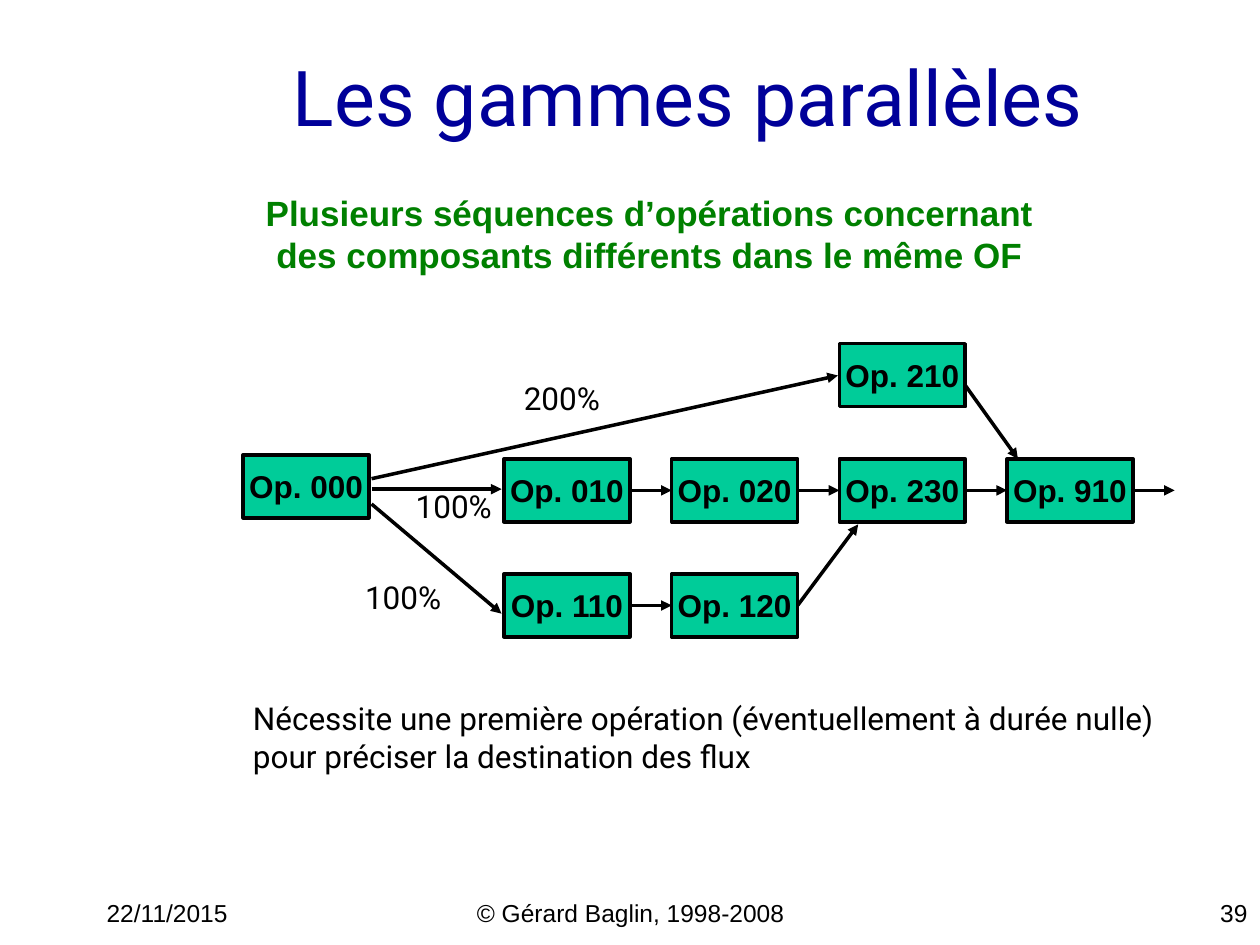
from dataclasses import dataclass

from lxml import etree
from pptx import Presentation
from pptx import util as u
from pptx.dml.color import RGBColor
from pptx.enum import shapes, text
from pptx.oxml import ns

BLACK = RGBColor(0x00, 0x00, 0x00)
NAVY = RGBColor(0x00, 0x00, 0x99)
DARK_GREEN = RGBColor(0x00, 0x80, 0x00)
TEAL = RGBColor(0x00, 0xCC, 0x99)

# Grid of operations, in centimetres
BOX_W, BOX_H = 2.54, 1.27
FIRST_COLUMN, COLUMN_STEP = 10.16, 3.38
FIRST_ROW, ROW_STEP = 6.93, 2.32
LINE_WIDTH = u.Pt(2)
LEFT, CENTER, RIGHT = text.PP_ALIGN.LEFT, text.PP_ALIGN.CENTER, text.PP_ALIGN.RIGHT


@dataclass
class Operation:
    number: str
    left: float
    top: float

    @property
    def right(self) -> float:
        return self.left + BOX_W

    @property
    def middle(self) -> float:
        return self.top + BOX_H / 2


@dataclass
class Flow:
    x1: float
    y1: float
    x2: float
    y2: float


@dataclass
class Label:
    wording: str
    left: float
    top: float
    width: float
    height: float
    size: int = 18
    font: str = "Roboto"
    align: text.PP_ALIGN = LEFT
    color: RGBColor = BLACK
    bold: bool = False
    wrap: bool = False


def grid_operation(number: str, column: int, row: int) -> Operation:
    return Operation(number, FIRST_COLUMN + column * COLUMN_STEP,
                     FIRST_ROW + row * ROW_STEP)


def write(frame, wording: str, *, size: int = 18, font: str = "Arial",
          color: RGBColor = BLACK, bold: bool = False, align=CENTER,
          anchor=text.MSO_ANCHOR.MIDDLE, wrap: bool = False) -> None:
    frame.auto_size = text.MSO_AUTO_SIZE.NONE
    frame.word_wrap = wrap
    frame.vertical_anchor = anchor
    paragraph = frame.paragraphs[0]
    paragraph.text = wording
    paragraph.alignment = align
    for run in paragraph.runs:
        run.font.size = u.Pt(size)
        run.font.name = font
        run.font.bold = bold
        run.font.color.rgb = color


def draw_operation(slide, operation: Operation) -> None:
    box = slide.shapes.add_shape(
        shapes.MSO_SHAPE.RECTANGLE, u.Cm(operation.left), u.Cm(operation.top),
        u.Cm(BOX_W), u.Cm(BOX_H))
    box.shadow.inherit = False
    box.fill.solid()
    box.fill.fore_color.rgb = TEAL
    box.line.color.rgb = BLACK
    box.line.width = LINE_WIDTH
    write(box.text_frame, f"Op. {operation.number}", bold=True)


def draw_flow(slide, flow: Flow) -> None:
    arrow = slide.shapes.add_connector(
        shapes.MSO_CONNECTOR.STRAIGHT, u.Cm(flow.x1), u.Cm(flow.y1),
        u.Cm(flow.x2), u.Cm(flow.y2))
    arrow.line.color.rgb = BLACK
    arrow.line.width = LINE_WIDTH
    etree.SubElement(arrow.line._get_or_add_ln(), ns.qn("a:tailEnd"), type="triangle")
    etree.SubElement(arrow._element.spPr, ns.qn("a:effectLst"))


def draw_label(slide, label: Label) -> None:
    box = slide.shapes.add_textbox(u.Cm(label.left), u.Cm(label.top),
                                   u.Cm(label.width), u.Cm(label.height))
    write(box.text_frame, label.wording, size=label.size, font=label.font,
          color=label.color, bold=label.bold, align=label.align,
          anchor=text.MSO_ANCHOR.TOP, wrap=label.wrap)


def main() -> None:
    deck = Presentation()
    deck.slide_width, deck.slide_height = u.Cm(25.4), u.Cm(19.05)
    slide = deck.slides.add_slide(deck.slide_layouts[5])

    # Title
    title = slide.shapes.title
    title.left, title.top = u.Cm(0.51), u.Cm(0.33)
    title.width, title.height = u.Cm(21.59), u.Cm(3.18)
    write(title.text_frame, "Les gammes parallèles", size=44, font="Roboto",
          color=NAVY, align=RIGHT, wrap=True)

    # Operations: a start, then three parallel rows
    start = Operation("000", 4.9, 9.17)
    op_210 = grid_operation("210", 2, 0)
    main_row = [grid_operation(number, column, 1)
                for column, number in enumerate(["010", "020", "230", "910"])]
    lower_row = [grid_operation(number, column, 2)
                 for column, number in enumerate(["110", "120"])]
    op_230, op_910 = main_row[2:]
    op_120 = lower_row[-1]
    for operation in [start, op_210, *main_row, *lower_row]:
        draw_operation(slide, operation)

    # Flows along the rows, and out of the last operation
    gap = COLUMN_STEP - BOX_W
    for operation in [*main_row, lower_row[0]]:
        draw_flow(slide, Flow(operation.right, operation.middle,
                              operation.right + gap, operation.middle))

    # Flows that split from the start and join the main row
    split_x = start.right + 0.05
    for flow in [
        Flow(split_x, 9.65, op_210.left - 0.03, 7.57),
        Flow(split_x, 9.86, FIRST_COLUMN - 0.05, 9.86),
        Flow(split_x, 10.16, FIRST_COLUMN - 0.05, 12.37),
        Flow(op_120.right, op_120.middle, op_230.left + 0.38, 10.57),
        Flow(op_210.right, 7.77, op_910.left + 0.22, op_910.top),
    ]:
        draw_flow(slide, flow)

    # Texts and footer
    for label in [
        Label("Plusieurs séquences d’opérations concernant des composants "
              "différents dans le même OF", 4.7, 3.73, 16.79, 1.96, size=20,
              font="Arial", align=CENTER, color=DARK_GREEN, bold=True, wrap=True),
        Label("200%", 10.31, 7.52, 2.18, 1.02),
        Label("100%", 8.13, 9.7, 2.18, 1.02),
        Label("100%", 7.11, 11.53, 2.18, 1.02),
        Label("Nécessite une première opération (éventuellement à durée nulle)\n"
              "pour préciser la destination des flux", 4.85, 13.97, 18.8, 1.78),
        Label("22/11/2015", 1.9, 17.98, 5.28, 0.64, 14, "Arial", wrap=True),
        Label("© Gérard Baglin, 1998-2008", 8.69, 17.98, 8.05, 0.64, 14, "Arial",
              CENTER, wrap=True),
        Label("39", 20.12, 17.98, 5.28, 0.64, 14, "Arial", RIGHT, wrap=True),
    ]:
        draw_label(slide, label)

    deck.save("out.pptx")


if __name__ == "__main__":
    main()
